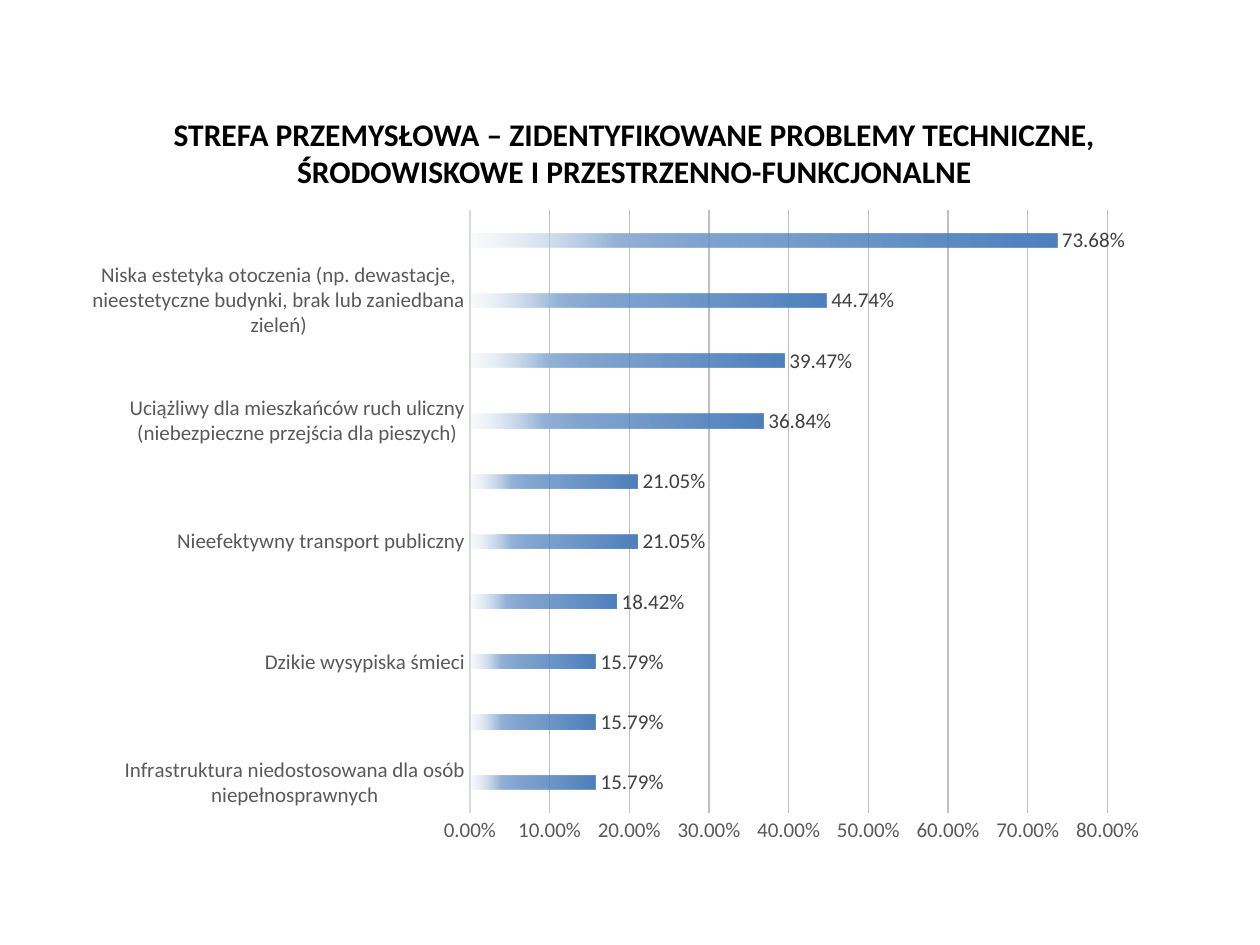
from pptx import Presentation
from pptx.chart.data import CategoryChartData
from pptx.dml.color import RGBColor
from pptx.enum.chart import XL_CHART_TYPE, XL_LABEL_POSITION, XL_TICK_MARK
from pptx.enum.text import MSO_ANCHOR, PP_ALIGN
from pptx.oxml import parse_xml
from pptx.oxml.ns import nsdecls
from pptx.util import Inches, Pt

FONT = "Calibri"
BLACK = RGBColor(0x00, 0x00, 0x00)
GRAY = RGBColor(0x59, 0x59, 0x59)
DARK = RGBColor(0x40, 0x40, 0x40)
PALE = RGBColor(0xD9, 0xD9, 0xD9)
GRID = RGBColor(0xBF, 0xBF, 0xBF)
BLUE = RGBColor(0x4F, 0x81, 0xBD)
SKY = RGBColor(0x95, 0xB3, 0xD7)
ICE = RGBColor(0xDC, 0xE6, 0xF2)
STOPS = [(0, BLUE, 100), (51, BLUE, 75), (75, SKY, 100), (100, ICE, 15)]

TITLE = [
    "STREFA PRZEMYSŁOWA – ZIDENTYFIKOWANE PROBLEMY TECHNICZNE,",
    "ŚRODOWISKOWE I PRZESTRZENNO-FUNKCJONALNE",
]
DATA = [
    ("Infrastruktura niedostosowana dla osób\nniepełnosprawnych", 0.1579),
    ("", 0.1579),
    ("Dzikie wysypiska śmieci", 0.1579),
    ("", 0.1842),
    ("Nieefektywny transport publiczny", 0.2105),
    ("", 0.2105),
    ("Uciążliwy dla mieszkańców ruch uliczny\n"
     "(niebezpieczne przejścia dla pieszych)", 0.3684),
    ("", 0.3947),
    ("Niska estetyka otoczenia (np. dewastacje,\n"
     "nieestetyczne budynki, brak lub zaniedbana\nzieleń)", 0.4474),
    ("", 0.7368),
]


def set_font(font, size, color, bold=False):
    font.name = FONT
    font.size = Pt(size)
    font.bold = bold
    font.color.rgb = color


def add_title(slide, box):
    shape = slide.shapes.title
    shape.left, shape.top, shape.width, shape.height = box
    frame = shape.text_frame
    frame.word_wrap = True
    frame.vertical_anchor = MSO_ANCHOR.TOP
    for i, line in enumerate(TITLE):
        para = frame.add_paragraph() if i else frame.paragraphs[0]
        para.alignment = PP_ALIGN.CENTER
        run = para.add_run()
        run.text = line
        set_font(run.font, 18, BLACK, True)


def fade_bars(series):
    stops = "".join(
        f'<a:gs pos="{pos * 1000}"><a:srgbClr val="{color}">'
        f'<a:alpha val="{alpha * 1000}"/></a:srgbClr></a:gs>'
        for pos, color, alpha in STOPS
    )
    fill = parse_xml(
        f'<a:gradFill {nsdecls("a")}><a:gsLst>{stops}</a:gsLst>'
        '<a:lin ang="10800000" scaled="0"/></a:gradFill>'
    )
    series.format.line.fill.background()
    series.format.fill.solid()
    props = series.format.fill._xPr
    props.replace(props[0], fill)


def fix_plot(chart, box, inner):
    area = chart._chartSpace.chart.plotArea
    for old in area.xpath("c:layout"):
        area.remove(old)
    sizes = "".join(
        f'<c:{tag} val="{part / whole}"/>'
        for tag, part, whole in zip("xywh", inner, box[2:] * 2)
    )
    area.insert(0, parse_xml(
        f'<c:layout {nsdecls("c")}><c:manualLayout>'
        '<c:layoutTarget val="inner"/><c:xMode val="edge"/>'
        f'<c:yMode val="edge"/>{sizes}</c:manualLayout></c:layout>'
    ))


def style_axes(chart):
    cats, vals = chart.category_axis, chart.value_axis
    for axis in (cats, vals):
        axis.major_tick_mark = XL_TICK_MARK.NONE
        axis.minor_tick_mark = XL_TICK_MARK.NONE
        set_font(axis.tick_labels.font, 12, GRAY)
    cats.format.line.color.rgb = PALE
    cats.format.line.width = Pt(1.5)
    vals.minimum_scale, vals.maximum_scale, vals.major_unit = 0, 0.8, 0.1
    vals.format.line.fill.background()
    vals.tick_labels.number_format = "0.00%"
    vals.tick_labels.number_format_is_linked = False
    vals.has_major_gridlines = True
    line = vals.major_gridlines.format.line
    line.color.rgb = GRID
    line.width = Pt(0.75)


def add_bars(slide, box):
    data = CategoryChartData(number_format="0.00%")
    data.categories = [name for name, share in DATA]
    data.add_series("Series 1", [share for name, share in DATA])
    chart = slide.shapes.add_chart(XL_CHART_TYPE.BAR_CLUSTERED, *box, data).chart
    chart.has_legend = False
    chart.has_title = False
    set_font(chart.font, 10, BLACK)
    fix_plot(chart, box, [Inches(n) for n in (3.03, 0.11, 5.06, 4.78)])
    style_axes(chart)
    plot = chart.plots[0]
    plot.vary_by_categories = False
    plot.gap_width = 326
    plot.overlap = -58
    fade_bars(plot.series[0])
    plot.has_data_labels = True
    labels = plot.data_labels
    labels.show_value = True
    labels.number_format = "0.00%"
    labels.number_format_is_linked = False
    labels.position = XL_LABEL_POSITION.OUTSIDE_END
    set_font(labels.font, 12, DARK)


def main():
    deck = Presentation()
    deck.slide_width, deck.slide_height = Inches(10), Inches(7.5)
    slide = deck.slides.add_slide(deck.slide_layouts[5])
    add_title(slide, [Inches(n) for n in (0.31, 0.86, 9.45, 0.71)])
    add_bars(slide, [Inches(n) for n in (0.7, 1.56, 8.52, 5.23)])
    deck.save("out.pptx")


if __name__ == "__main__":
    main()
